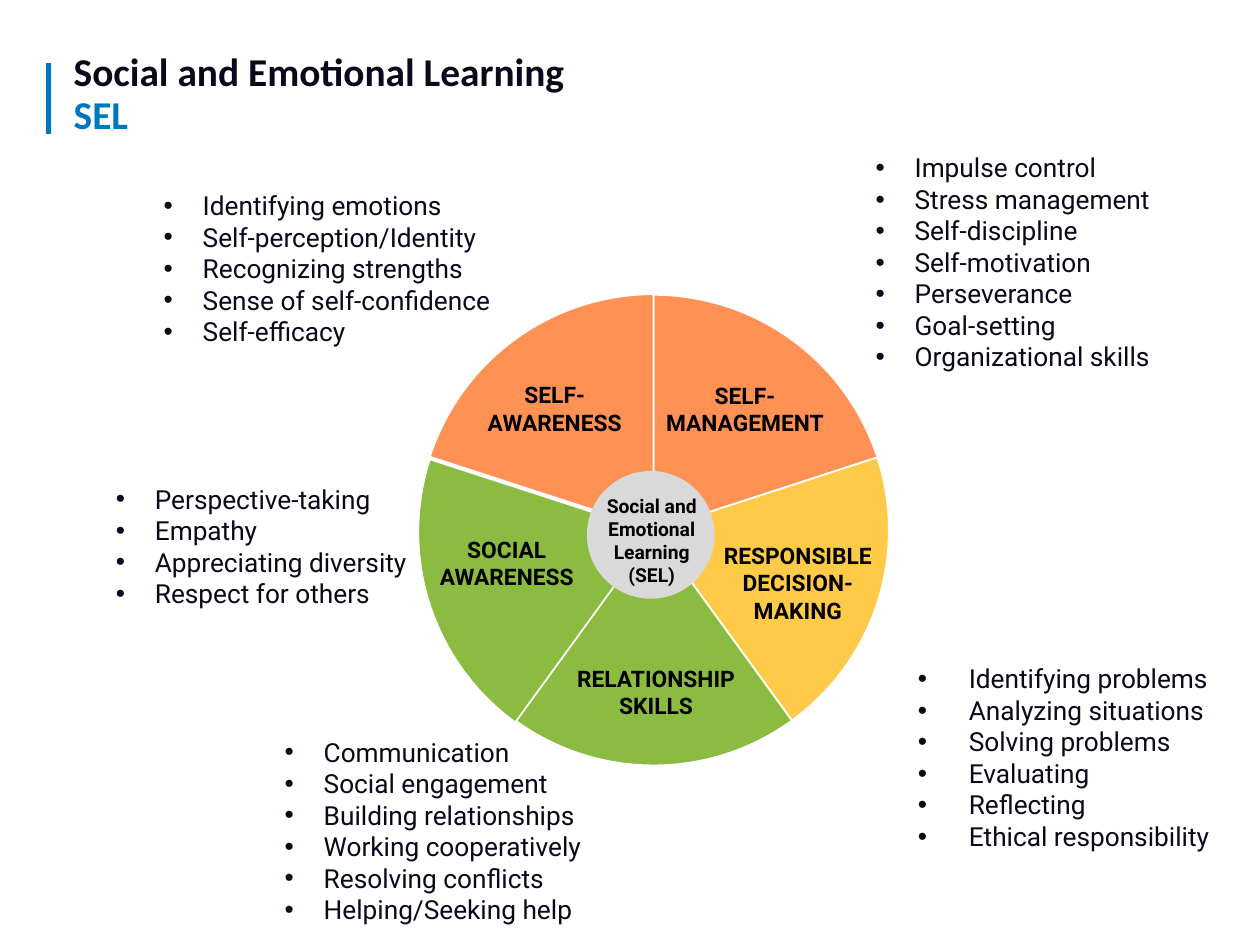
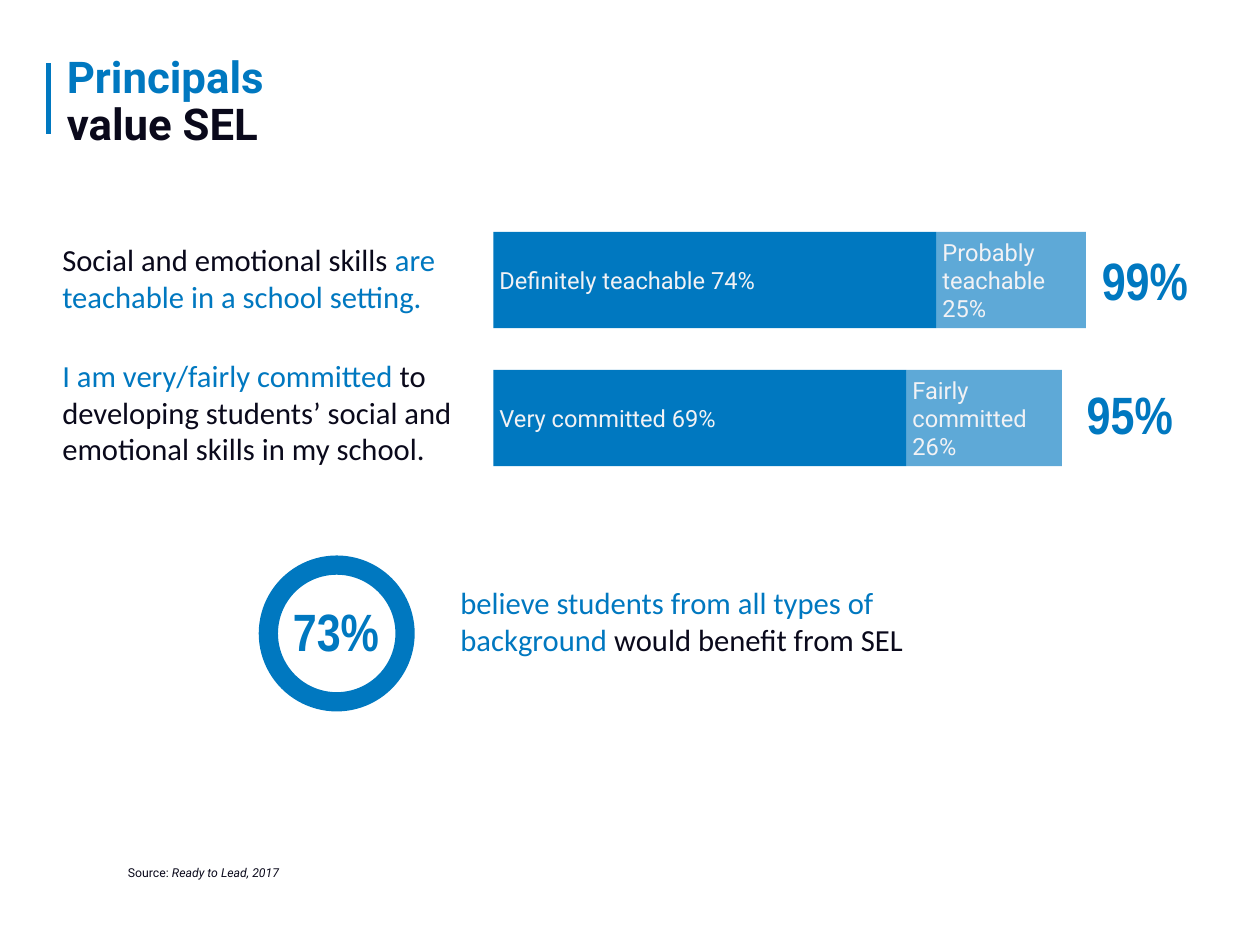
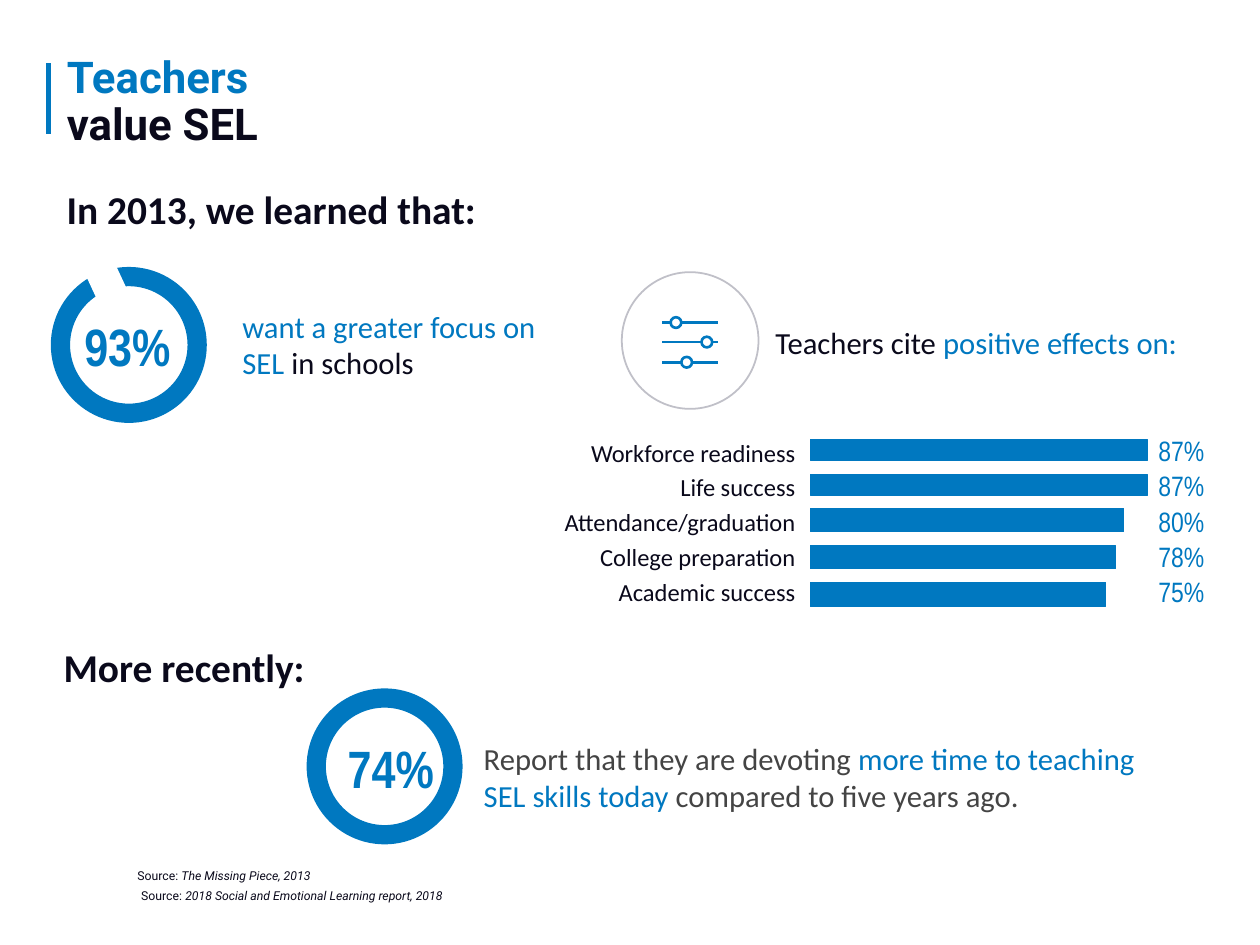
from dataclasses import dataclass, replace
from typing import NamedTuple, Optional

from lxml import etree
from pptx import Presentation
from pptx import util as u
from pptx.dml.color import RGBColor
from pptx.enum import shapes, text
from pptx.oxml import ns

Inches, Pt = u.Inches, u.Pt
SHAPE = shapes.MSO_SHAPE
ALIGN = text.PP_ALIGN


# Theme: colours and text styles
@dataclass(frozen=True)
class Style:
    font: str
    size: int
    color: str
    bold: bool = False
    spacing: Optional[float] = None


class Theme:
    blue = "0078C0"
    ink = "0A091B"
    white = "FFFFFF"
    orange = "FF7930"
    yellow = "FFCA48"
    green = "8BBC41"
    hub = "D9D9D9"
    outline = "C0C0C8"
    gray = "444444"

    wheel_title = Style("Calibri", 45, ink, True, 0.9)
    title = Style("Roboto", 50, ink, True, 0.9)
    heading = Style("Calibri", 45, ink, True)
    body = Style("Calibri", 35, ink)
    bullet = Style("Roboto", 30, ink)
    wedge = Style("Roboto", 26, "000000", True)
    hub_text = Style("Roboto", 22, "000000", True)
    bar_text = Style("Roboto", 27, "F2F2F5")
    percent = Style("Arial Narrow", 60, blue, True, 0.9)
    bar_label = Style("Calibri", 28, ink)
    bar_value = Style("Arial Narrow", 32, blue)
    source = Style("Roboto", 14, ink)


class Box(NamedTuple):
    left: float
    top: float
    width: float
    height: float

    def emu(self) -> list:
        return [Inches(v) for v in self]


class Span(NamedTuple):
    text: str
    color: Optional[str] = None
    italic: bool = False


def blue(words: str) -> Span:
    return Span(words, Theme.blue)


def line(words: str) -> list:
    return [Span(words)]


# Records for repeated elements
class Wedge(NamedTuple):
    label: str
    label_box: Box
    start: float
    end: float
    top: float
    color: str
    opacity: int = 100


class BulletList(NamedTuple):
    box: Box
    items: list
    margin: float = 0.62
    hanging: float = 0.62


class Segment(NamedTuple):
    label: str
    percent: int


class StackedBar(NamedTuple):
    top: float
    segments: list
    total: str
    total_left: float
    total_top: float


class Effect(NamedTuple):
    label: str
    value: str
    top: float
    width: float
    height: float


# Drawing helpers
def rgb(color: str) -> RGBColor:
    return RGBColor.from_string(color)


def fill_text(tf, paras: list, style: Style, align=ALIGN.LEFT, after: float = 0) -> None:
    for i, spans in enumerate(paras):
        p = tf.paragraphs[0] if i == 0 else tf.add_paragraph()
        p.alignment = align
        p.space_before = Pt(0)
        p.space_after = Pt(after)
        if style.spacing:
            p.line_spacing = style.spacing
        for span in spans:
            r = p.add_run()
            r.text = span.text
            r.font.name = style.font
            r.font.size = Pt(style.size)
            r.font.bold = style.bold
            r.font.italic = span.italic
            r.font.color.rgb = rgb(span.color or style.color)


def add_text(s, box: Box, paras: list, style: Style, align=ALIGN.LEFT,
             after: float = 0, wrap: bool = True):
    tf = s.shapes.add_textbox(*box.emu()).text_frame
    tf.word_wrap = wrap
    fill_text(tf, paras, style, align, after)
    return tf


def add_shape(s, kind, box: Box, fill: Optional[str] = None, outline: Optional[str] = None,
              weight: float = 1, opacity: int = 100):
    sp = s.shapes.add_shape(kind, *box.emu())
    sp.shadow.inherit = False
    if fill:
        sp.fill.solid()
        sp.fill.fore_color.rgb = rgb(fill)
        if opacity < 100:
            color = sp.element.spPr.find(f"{ns.qn('a:solidFill')}/{ns.qn('a:srgbClr')}")
            etree.SubElement(color, ns.qn("a:alpha"), val=str(opacity * 1000))
    else:
        sp.fill.background()
    if outline:
        sp.line.color.rgb = rgb(outline)
        sp.line.width = Pt(weight)
    else:
        sp.line.fill.background()
    return sp


def add_line(s, x1: float, y1: float, x2: float, y2: float, weight: float):
    ln = s.shapes.add_connector(shapes.MSO_CONNECTOR.STRAIGHT,
                                Inches(x1), Inches(y1), Inches(x2), Inches(y2))
    ln.line.color.rgb = rgb(Theme.blue)
    ln.line.width = Pt(weight)
    etree.SubElement(ln.element.spPr, ns.qn("a:effectLst"))
    return ln


def add_bullets(s, bullets: BulletList) -> None:
    tf = add_text(s, bullets.box, [line(item) for item in bullets.items], Theme.bullet)
    for p in tf.paragraphs:
        props = p._p.get_or_add_pPr()
        props.set("marL", str(Inches(bullets.margin)))
        props.set("indent", str(-Inches(bullets.hanging)))
        etree.SubElement(props, ns.qn("a:buFont"), typeface="Arial")
        etree.SubElement(props, ns.qn("a:buChar"), char="•")


def add_percent(s, left: float, top: float, words: str) -> None:
    add_text(s, Box(left, top, 2, 1), [line(words)], Theme.percent)


def add_ring(s, left: float, top: float) -> None:
    add_shape(s, SHAPE.OVAL, Box(left, top, 2.17, 2.17), None, Theme.blue, 22)


def add_source(s, right: float, top: float, words: str) -> None:
    add_text(s, Box(0, top, right, 0.35), [[Span("Source: "), Span(words, italic=True)]],
             Theme.source, ALIGN.RIGHT)


def new_slide(prs, layout, box: Box, paras: list, style: Style):
    s = prs.slides.add_slide(layout)
    title = s.shapes.title
    title.left, title.top, title.width, title.height = box.emu()
    tf = title.text_frame
    tf.auto_size = text.MSO_AUTO_SIZE.NONE
    tf.vertical_anchor = text.MSO_ANCHOR.TOP
    tf.word_wrap = True
    fill_text(tf, paras, style)
    return s


# Slide 1: wheel of five skills
def build_wheel(prs, layout):
    t = Theme
    s = new_slide(prs, layout, Box(1.07, 0.79, 9.96, 1.46),
                  [line("Social and Emotional Learning"), [blue("SEL")]], t.wheel_title)
    wedges = [
        Wedge("SELF-MANAGEMENT", Box(10.24, 6.01, 3.17, 0.98), 270, 342, 4.68, t.orange, 82),
        Wedge("RESPONSIBLE DECISION-MAKING", Box(11.08, 8.55, 3.17, 1.41),
              342, 54, 4.68, t.yellow),
        Wedge("RELATIONSHIP SKILLS", Box(8.83, 10.5, 3.17, 0.98), 54, 126, 4.68, t.green),
        Wedge("SOCIAL AWARENESS", Box(6.46, 8.45, 3.17, 0.98), 126, 198, 4.71, t.green),
        Wedge("SELF-AWARENESS", Box(7.38, 6, 2.85, 0.98), 198, 270, 4.67, t.orange, 82),
    ]
    for w in wedges:
        sp = add_shape(s, SHAPE.PIE, Box(6.64, w.top, 7.47, 7.47), w.color, t.white, 2, w.opacity)
        # Angles are stored in 1/60000 degree, adjustments in 1/100000
        sp.adjustments[0], sp.adjustments[1] = w.start * 0.6, w.end * 0.6
    add_shape(s, SHAPE.OVAL, Box(9.33, 7.49, 2, 2), t.hub, t.hub, 2)
    for w in wedges:
        add_text(s, w.label_box, [line(w.label)], t.wedge, ALIGN.CENTER)
    hub_lines = ["Social and", "Emotional", "Learning", "(SEL)"]
    add_text(s, Box(9.43, 7.79, 1.83, 1.58), [line(h) for h in hub_lines],
             t.hub_text, ALIGN.CENTER)

    for bullets in (
        BulletList(Box(1.74, 7.62, 5, 2.12),
                   ["Perspective-taking", "Empathy", "Appreciating diversity",
                    "Respect for others"]),
        BulletList(Box(4.42, 11.63, 5.17, 3.13),
                   ["Communication", "Social engagement", "Building relationships",
                    "Working cooperatively", "Resolving conflicts", "Helping/Seeking help"]),
        BulletList(Box(2.5, 2.96, 5.56, 2.63),
                   ["Identifying emotions", "Self-perception/Identity", "Recognizing strengths",
                    "Sense of self-confidence", "Self-efficacy"]),
        BulletList(Box(14.25, 10.47, 5.33, 3.13),
                   ["Identifying problems", "Analyzing situations", "Solving problems",
                    "Evaluating", "Reflecting", "Ethical responsibility"], 1.03, 0.81),
        BulletList(Box(13.8, 2.36, 5.56, 3.64),
                   ["Impulse control", "Stress management", "Self-discipline",
                    "Self-motivation", "Perseverance", "Goal-setting",
                    "Organizational skills"]),
    ):
        add_bullets(s, bullets)
    return s


# Slide 2: principals
VALUE_TITLE = Box(0.96, 0.83, 8.92, 1.62)


def build_principals(prs, layout) -> None:
    t = Theme
    s = new_slide(prs, layout, VALUE_TITLE, [[blue("Principals")], line("value SEL")], t.title)
    statements = [
        [Span("Social and emotional skills "), blue("are teachable in a school setting.")],
        [blue("I am very/fairly committed "),
         Span("to developing students’ social and emotional skills in my school.")],
    ]
    tf = add_text(s, Box(0.89, 3.78, 6.78, 4.14), statements, t.body)
    tf.paragraphs[0].space_after = Pt(48)

    # Stacked bars, drawn to one scale
    inches_per_percent = 0.095
    for bar in (
        StackedBar(3.68, [Segment("Definitely teachable 74%", 74),
                          Segment("Probably teachable 25%", 25)], "99%", 17.39, 4),
        StackedBar(5.87, [Segment("Very committed 69%", 69),
                          Segment("Fairly committed 26%", 26)], "95%", 17.15, 6.12),
    ):
        left = 7.83
        for segment, opacity in zip(bar.segments, (100, 63)):
            width = segment.percent * inches_per_percent
            sp = add_shape(s, SHAPE.RECTANGLE, Box(left, bar.top, width, 1.53),
                           t.blue, opacity=opacity)
            sp.text_frame.word_wrap = True
            sp.text_frame.vertical_anchor = text.MSO_ANCHOR.MIDDLE
            fill_text(sp.text_frame, [line(segment.label)], t.bar_text)
            left += width
        add_percent(s, bar.total_left, bar.total_top, bar.total)

    # Ring and its statement
    add_ring(s, 4.26, 8.97)
    add_percent(s, 4.55, 9.58, "73%")
    add_text(s, Box(7.21, 9.22, 7.33, 1.28),
             [[blue("believe students from all types of background "),
               Span("would benefit from SEL")]], t.body)
    add_source(s, 4.53, 13.69, "Ready to Lead, 2017")


# Slide 3: teachers
def add_slider_icon(s) -> None:
    add_shape(s, SHAPE.OVAL, Box(9.87, 4.32, 2.17, 2.17), None, Theme.outline, 2)
    knob = 0.17
    for x, y in ((10.73, 5.12), (11.22, 5.43), (10.9, 5.75)):
        add_line(s, 10.51, y, 11.4, y, 3)
        add_shape(s, SHAPE.OVAL, Box(x - knob / 2, y - knob / 2, knob, knob),
                  Theme.white, Theme.blue, 3)


def build_teachers(prs, layout) -> None:
    t = Theme
    s = new_slide(prs, layout, VALUE_TITLE, [[blue("Teachers")], line("value SEL")], t.title)
    add_text(s, Box(0.96, 2.89, 6.9, 0.86), [line("In 2013, we learned that:")],
             t.heading, wrap=False)
    add_text(s, Box(0.91, 10.16, 4.21, 0.86), [line("More recently:")], t.heading, wrap=False)

    # Open ring: greater focus
    add_ring(s, 0.96, 4.39)
    gap = add_shape(s, SHAPE.ROUNDED_RECTANGLE, Box(1.42, 4.12, 0.5, 0.64), t.white)
    gap.rotation = 335
    add_percent(s, 1.24, 5.05, "93%")
    add_text(s, Box(3.75, 4.83, 5.1, 1.28),
             [[blue("want a greater focus on SEL "), Span("in schools")]], t.body)

    # Positive effects
    add_slider_icon(s)
    add_text(s, Box(12.21, 5.09, 7.5, 0.69),
             [[Span("Teachers cite "), blue("positive effects on:")]], t.body)
    effects = [
        Effect("Workforce readiness", "87%", 6.98, 5.35, 0.33),
        Effect("Life success", "87%", 7.53, 5.35, 0.33),
        Effect("Attendance/graduation", "80%", 8.07, 4.98, 0.37),
        Effect("College preparation", "78%", 8.66, 4.85, 0.37),
        Effect("Academic success", "75%", 9.24, 4.69, 0.39),
    ]
    for e in effects:
        add_shape(s, SHAPE.RECTANGLE, Box(12.86, e.top, e.width, e.height), t.blue, t.blue)
    add_text(s, Box(6.3, 6.9, 6.42, 3.28), [line(e.label) for e in effects],
             t.bar_label, ALIGN.RIGHT, after=6)
    add_text(s, Box(18.29, 6.83, 0.94, 2.91), [line(e.value) for e in effects],
             t.bar_value, after=2, wrap=False)

    # Closed ring: more time
    add_ring(s, 5.02, 11.08)
    add_percent(s, 5.42, 11.74, "74%")
    add_text(s, Box(7.58, 11.7, 10.7, 1.28),
             [[Span("Report that they are devoting "),
               blue("more time to teaching SEL skills today"),
               Span(" compared to five years ago.")]], replace(t.body, color=t.gray))
    add_source(s, 5.03, 13.74, "The Missing Piece, 2013")
    add_source(s, 7.13, 14.05, "2018 Social and Emotional Learning report, 2018")


def main() -> None:
    prs = Presentation()
    prs.slide_width, prs.slide_height = Inches(20), Inches(15)
    layout = prs.slide_layouts.get_by_name("Title Only")
    s = build_wheel(prs, layout)
    # The accent rule beside the title belongs to the shared layout
    layout.shapes.element.append(add_line(s, 0.77, 1, 0.77, 2.13, 5).element)
    build_principals(prs, layout)
    build_teachers(prs, layout)
    prs.save("out.pptx")


if __name__ == "__main__":
    main()
